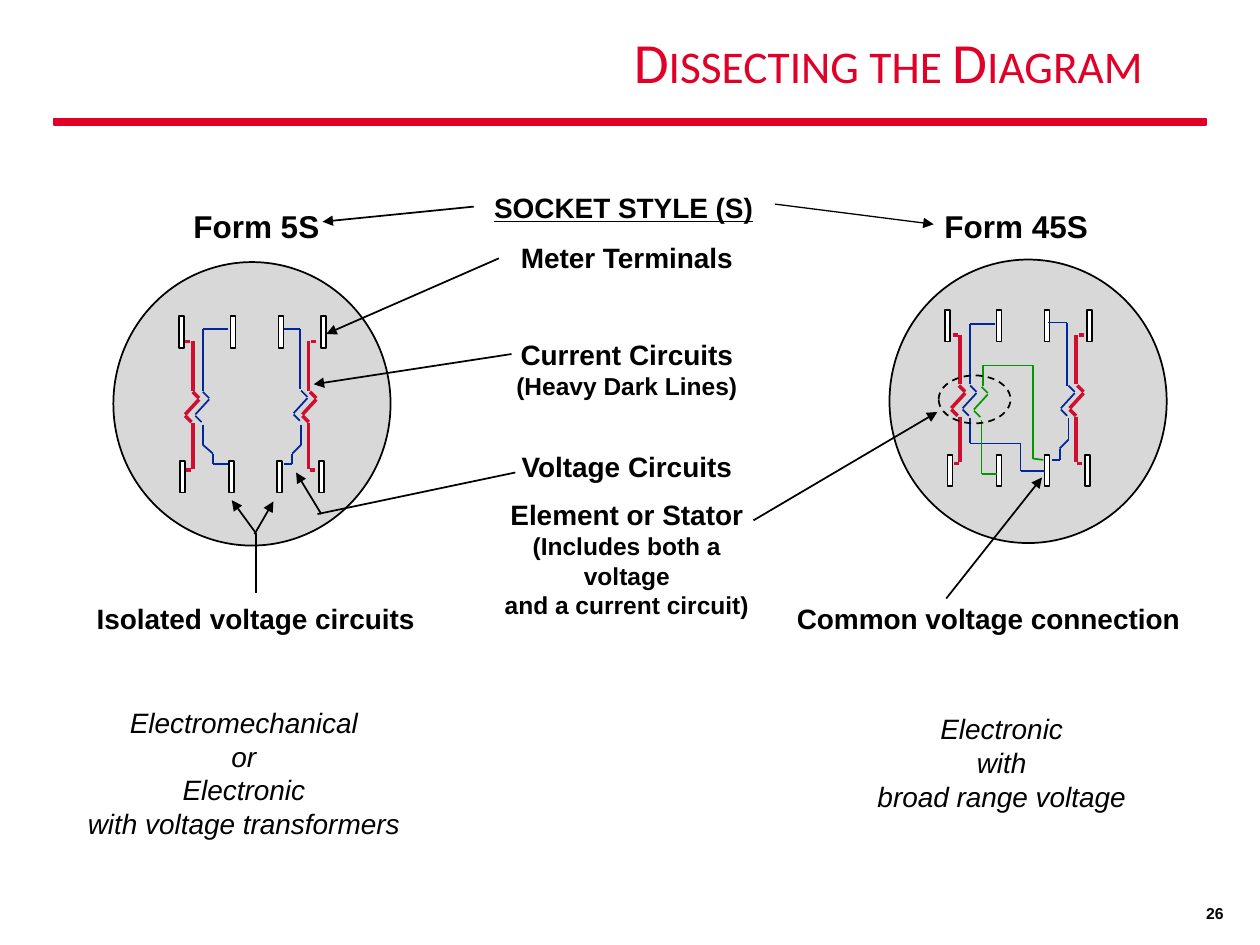
from pptx import Presentation
from pptx import util as u
from pptx.dml.color import RGBColor
from pptx.enum import dml, shapes, text
from pptx.oxml import ns
from lxml import etree

PX = u.Inches(1) // 100
BLACK = RGBColor(0x00, 0x00, 0x00)
WHITE = RGBColor(0xFF, 0xFF, 0xFF)
GRAY = RGBColor(0xD8, 0xD8, 0xD8)
SCARLET = RGBColor(0xE1, 0x00, 0x27)
RED = RGBColor(0xCF, 0x0E, 0x30)
BLUE = RGBColor(0x00, 0x27, 0x9F)
GREEN = RGBColor(0x00, 0x99, 0x00)
CENTER = text.PP_ALIGN.CENTER
RIGHT = text.PP_ALIGN.RIGHT


def write(frame, content, size=16, font="Arial", color=BLACK, align=CENTER, before=0,
          bold=False, italic=False, underline=False):
    paragraph = frame.paragraphs[0] if not frame.text else frame.add_paragraph()
    paragraph.alignment = align
    paragraph.space_before = u.Pt(before)
    run = paragraph.add_run()
    run.text = content
    run.font.size = u.Pt(size)
    run.font.name = font
    run.font.color.rgb = color
    run.font.bold = bold
    run.font.italic = italic
    run.font.underline = underline
    return run


def draw_line(x1, y1, x2, y2, color=BLACK, width=1, arrow=False):
    line = slide.shapes.add_connector(
        shapes.MSO_CONNECTOR.STRAIGHT, x1 * PX, y1 * PX, x2 * PX, y2 * PX)
    line.line.color.rgb = color
    line.line.width = u.Pt(width)
    properties = line._element.spPr
    if arrow:
        etree.SubElement(properties.find(ns.qn("a:ln")), ns.qn("a:tailEnd"), type="triangle")
    etree.SubElement(properties, ns.qn("a:effectLst"))


presentation = Presentation()
presentation.slide_width = 1000 * PX
presentation.slide_height = 750 * PX
slide = presentation.slides.add_slide(presentation.slide_layouts[5])

title = slide.shapes.title
title.left, title.top, title.width, title.height = 134 * PX, 45 * PX, 783 * PX, 13 * PX
title.text_frame.vertical_anchor = text.MSO_ANCHOR.MIDDLE
title.text_frame.auto_size = text.MSO_AUTO_SIZE.NONE
title_run = write(title.text_frame, "Dissecting the Diagram", size=32.4, font="Calibri",
                  color=SCARLET, align=RIGHT)
title_run._r.get_or_add_rPr().set("cap", "small")
title.text_frame.paragraphs[0].line_spacing = 0.9

RECTANGLE = shapes.MSO_SHAPE.RECTANGLE
OVAL = shapes.MSO_SHAPE.OVAL
outlines = [
    (RECTANGLE, 43, 94, 914, 5, SCARLET, SCARLET),
    (OVAL, 90, 208, 220, 225, GRAY, BLACK),
    (OVAL, 706, 206, 220, 225, GRAY, BLACK),
]
terminal_rows = [
    (251, (142, 183, 221, 255)),
    (366, (143, 182, 220, 253)),
    (246, (750, 791, 829, 863)),
    (361, (752, 791, 829, 861)),
]
for top, lefts in terminal_rows:
    for left in lefts:
        outlines.append((RECTANGLE, left, top, 4, 25, WHITE, BLACK))
for kind, left, top, width, height, fill, border in outlines:
    shape = slide.shapes.add_shape(kind, left * PX, top * PX, width * PX, height * PX)
    shape.shadow.inherit = False
    shape.fill.solid()
    shape.fill.fore_color.rgb = fill
    shape.line.color.rgb = border
    shape.line.width = u.Pt(1)

for x, y, side in [(153, 271, -1), (245, 271, 1), (762, 266, -1), (854, 266, 1)]:
    draw_line(x, y, x, y + 39, RED, 2)
    draw_line(x, y + 65, x, y + 101, RED, 2)
    draw_line(x + 6 * side, y, x + 2 * side, y, RED, 2)
    draw_line(x + 5 * side, y + 102, x + side, y + 102, RED, 2)

zigzags = [
    (153, 311, RED, 2), (246, 311, RED, 2), (761, 306, RED, 2), (855, 306, RED, 2),
    (161, 311, BLUE, 1), (239, 310, BLUE, 1), (770, 306, BLUE, 1), (848, 306, BLUE, 1),
    (779, 307, GREEN, 1),
]
for x, y, color, width in zigzags:
    draw_line(x, y, x + 5, y + 5, color, width)
    draw_line(x + 5, y + 6, x - 6, y + 18, color, width)
    draw_line(x - 6, y + 19, x - 1, y + 24, color, width)

wires = [
    (BLUE, [(181, 261), (161, 261), (161, 310)]),
    (BLUE, [(161, 337), (161, 353), (169, 360), (169, 368), (181, 368)]),
    (BLUE, [(225, 261), (238, 261), (238, 309)]),
    (BLUE, [(239, 337), (239, 353), (232, 360), (232, 368), (225, 368)]),
    (BLUE, [(790, 257), (770, 257), (770, 305)]),
    (BLUE, [(770, 332), (770, 352), (810, 352), (810, 374), (829, 374)]),
    (BLUE, [(832, 256), (847, 256), (847, 306)]),
    (BLUE, [(848, 332), (848, 349), (841, 356), (841, 365), (835, 365)]),
    (GREEN, [(780, 306), (780, 290), (820, 290), (820, 364), (828, 365)]),
    (GREEN, [(779, 333), (779, 376), (791, 376)]),
]
for color, points in wires:
    for start, end in zip(points, points[1:]):
        draw_line(*start, *end, color)

element = slide.shapes.add_shape(OVAL, 745 * PX, 298 * PX, 57 * PX, 38 * PX)
element.shadow.inherit = False
element.fill.background()
element.line.color.rgb = BLACK
element.line.width = u.Pt(1)
element.line.dash_style = dml.MSO_LINE.DASH

arrows = [
    (396, 205, 259, 265), (406, 281, 249, 305), (598, 413, 744, 327),
    (255, 408, 235, 375), (751, 475, 827, 379), (202, 424, 217, 398),
    (203, 423, 184, 397), (376, 164, 256, 176),
]
for ends in arrows:
    draw_line(*ends, arrow=True)
draw_line(615, 162, 741, 178, width=0.75, arrow=True)
draw_line(409, 375, 252, 408)
draw_line(203, 423, 203, 471)

labels = [
    (142, 159, 123, 40, ["Form 5S"], dict(size=18, bold=True)),
    (737, 159, 139, 40, ["Form 45S"], dict(size=18, bold=True)),
    (382, 146, 226, 37, ["SOCKET STYLE (S)"], dict(bold=True, underline=True)),
    (66, 472, 274, 37, ["Isolated voltage circuits"], dict(bold=True)),
    (622, 472, 325, 37, ["Common voltage connection"], dict(bold=True)),
    (59, 555, 269, 117, ["Electromechanical", "or", "Electronic", "with voltage transformers"],
     dict(italic=True)),
    (686, 560, 218, 90, ["Electronic", "with", "broad range voltage"], dict(italic=True)),
    (717, 700, 264, 50, ["26"], dict(size=9, bold=True, align=RIGHT)),
]
for left, top, width, height, lines, style in labels:
    box = slide.shapes.add_textbox(left * PX, top * PX, width * PX, height * PX)
    box.text_frame.word_wrap = style.get("align") == RIGHT
    box.text_frame.vertical_anchor = text.MSO_ANCHOR.MIDDLE
    for content in lines:
        write(box.text_frame, content, **style)

legend = slide.shapes.add_textbox(377 * PX, 186 * PX, 241 * PX, 367 * PX)
legend.text_frame.word_wrap = True
for content, size, before in [
    ("Meter Terminals", 16, 0),
    ("Current Circuits", 16, 36),
    ("(Heavy Dark Lines)", 14, 0),
    ("Voltage Circuits", 16, 28),
    ("Element or Stator", 16, 8.5),
    ("(Includes both a voltage", 14, 0),
    ("and a current circuit)", 14, 0),
]:
    write(legend.text_frame, content, size=size, before=before, bold=True)

presentation.save("out.pptx")
